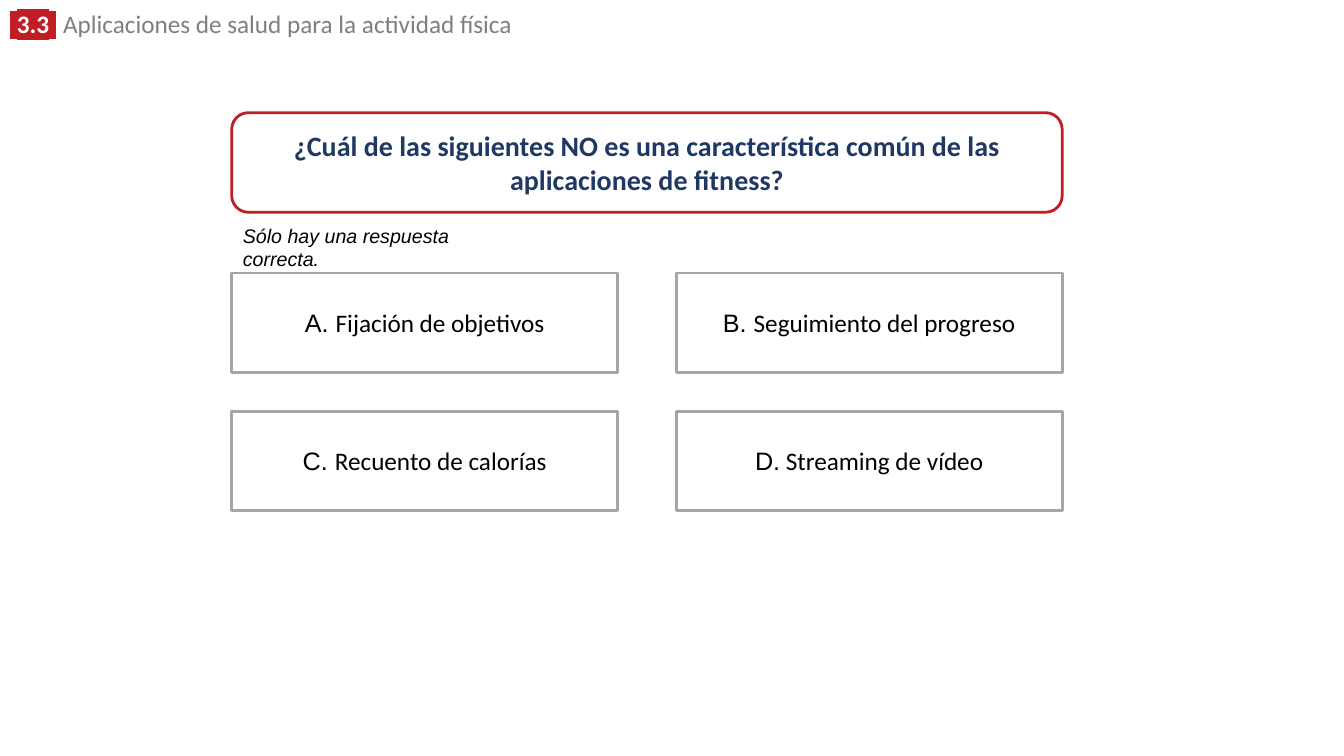
"""Build the quiz slide on fitness app features."""
from lxml.etree import SubElement
from pptx import Presentation
from pptx.dml.color import RGBColor
from pptx.enum.shapes import MSO_SHAPE
from pptx.enum.text import MSO_ANCHOR, PP_ALIGN
from pptx.oxml.ns import qn
from pptx.util import Cm, Pt

RED, GREY, NAVY, BLACK, WHITE = "C01E24", "A5A5A5", "203864", "000000", "FFFFFF"
BADGE = [(" ", "Arial"), ("3.3", "Calibri"), (" ", "Arial")]
TITLE = [(" ", "Arial"), ("Aplicaciones de salud para la actividad física", "Calibri")]
QUERY = "¿Cuál de las siguientes NO es una característica común de las aplicaciones de fitness?"
HINT = "Sólo hay una respuesta correcta."
ANSWERS = [
    ("A. ", "Fijación de objetivos"),
    ("B. ", "Seguimiento del progreso"),
    ("C. ", "Recuento de calorías"),
    ("D.", " Streaming de vídeo"),
]
LEFT, TOP, WIDE, HIGH = 5.84, 6.88, 9.73, 2.51
STEP_X, STEP_Y = 11.2, 3.48


def paint(item, color):
    """Give a fill or font one solid colour."""
    if hasattr(item, "solid"):
        item.solid()
        item.fore_color.rgb = RGBColor.from_string(color)
    else:
        item.color.rgb = RGBColor.from_string(color)


def style(font, size, color, name=None, bold=False, italic=False):
    """Set the look of a font."""
    font.size, font.bold, font.italic = Pt(size), bold, italic
    if name:
        font.name = name
    paint(font, color)


def add_runs(para, parts):
    """Add (text, font name) runs and return them."""
    runs = []
    for text, name in parts:
        run = para.add_run()
        run.text, run.font.name = text, name
        runs.append(run)
    return runs


def mark(run, color):
    """Highlight a run behind its text."""
    props = run.font._element if hasattr(run.font, "_element") else run._r.get_or_add_rPr()
    light = SubElement(props, qn("a:highlight"))
    SubElement(light, qn("a:srgbClr")).set("val", color)
    props.find(qn("a:solidFill")).addnext(light)


def add_text(slide, left, top, width, height):
    """Add a wrapping text box and return its paragraph."""
    frame = slide.shapes.add_textbox(Cm(left), Cm(top), Cm(width), Cm(height)).text_frame
    frame.word_wrap = True
    return frame.paragraphs[0]


def add_box(slide, kind, left, top, width, edge):
    """Add a white outlined box and return its centred paragraph."""
    box = slide.shapes.add_shape(kind, Cm(left), Cm(top), Cm(width), Cm(HIGH))
    box.shadow.inherit = False
    paint(box.fill, WHITE)
    paint(box.line.fill, edge)
    box.line.width = Pt(2)
    box.text_frame.word_wrap = True
    box.text_frame.vertical_anchor = MSO_ANCHOR.MIDDLE
    para = box.text_frame.paragraphs[0]
    para.alignment = PP_ALIGN.CENTER
    return para


def main():
    """Lay out the slide and save it."""
    deck = Presentation()
    deck.slide_width, deck.slide_height = Cm(33.87), Cm(19.05)
    slide = deck.slides.add_slide(deck.slide_layouts[6])

    head = add_text(slide, 0, 0.23, 24.18, 0.86)
    head.line_spacing = 0.8
    for run in add_runs(head, BADGE):
        style(run.font, 18, WHITE, bold=True)
        mark(run, RED)
    for run in add_runs(head, TITLE):
        style(run.font, 18, "7F7F7F")

    query = add_box(slide, MSO_SHAPE.ROUNDED_RECTANGLE, LEFT, 2.84, STEP_X + WIDE, RED)
    query.text = QUERY
    style(query.font, 20, NAVY, "Calibri", bold=True)

    for i, (label, text) in enumerate(ANSWERS):
        row, col = divmod(i, 2)
        para = add_box(slide, MSO_SHAPE.RECTANGLE, LEFT + col * STEP_X,
                       TOP + row * STEP_Y, WIDE, GREY)
        add_runs(para, [(label, "Arial"), (text, "Calibri")])
        style(para.font, 18, BLACK)

    hint = add_text(slide, 5.87, 5.51, 5.99, 0.86)
    hint.text = HINT
    style(hint.font, 14, BLACK, "Arial", italic=True)
    deck.save("out.pptx")


if __name__ == "__main__":
    main()
